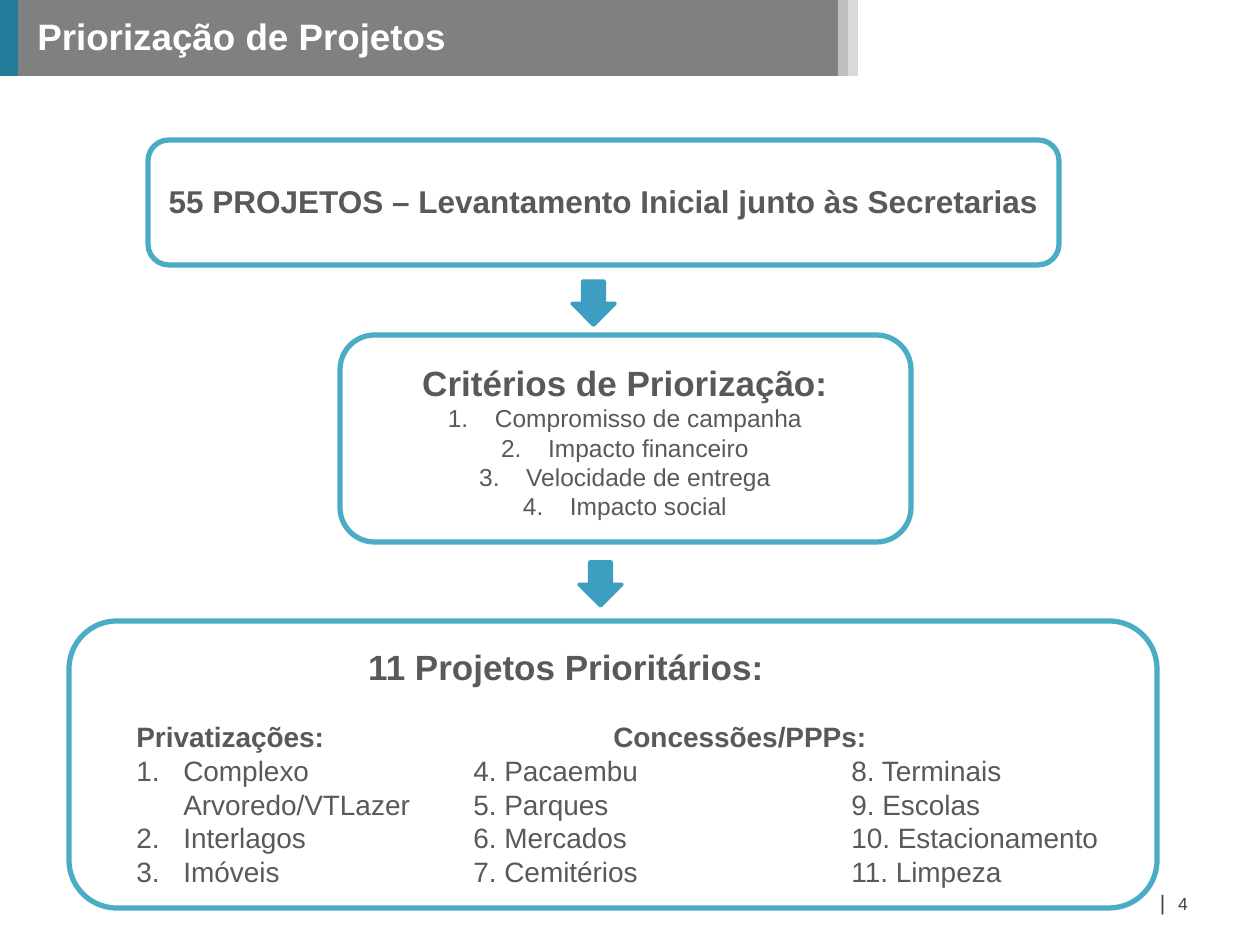
from dataclasses import dataclass

from lxml import etree
from pptx import Presentation
from pptx.dml.color import RGBColor
from pptx.enum.shapes import MSO_SHAPE
from pptx.enum.text import MSO_ANCHOR, PP_ALIGN
from pptx.oxml.ns import qn
from pptx.util import Emu, Pt

RECTANGLE = MSO_SHAPE.RECTANGLE
ROUNDED = MSO_SHAPE.ROUNDED_RECTANGLE
DOWN_ARROW = MSO_SHAPE.DOWN_ARROW
LEFT, CENTER, RIGHT = PP_ALIGN.LEFT, PP_ALIGN.CENTER, PP_ALIGN.RIGHT
TOP, MIDDLE = MSO_ANCHOR.TOP, MSO_ANCHOR.MIDDLE
EMU_PER_PX = 914400 / 126
NUMBER_INDENT = 47
COLUMN_TAB = 378
HEADING_INDENT = 140


@dataclass(frozen=True)
class Theme:
    font: str = "Arial"
    white: str = "FFFFFF"
    gray: str = "808080"
    light_gray: str = "D9D9D9"
    teal: str = "227D9A"
    border: str = "4BACC6"
    arrow: str = "3D9EC1"
    text: str = "595959"
    footer: str = "404040"
    title_size: int = 21
    heading_size: int = 20
    lead_size: int = 18
    list_size: int = 16
    criteria_size: int = 14
    separator_size: int = 12
    number_size: int = 10


THEME = Theme()


def px(length):
    return Emu(round(length * EMU_PER_PX))


def add_block(page, kind, bounds, fill, line=None, line_width=0, opacity=None):
    """Add a filled preset shape; opacity is a percentage."""
    block = page.shapes.add_shape(kind, *map(px, bounds))
    block.shadow.inherit = False
    block.fill.solid()
    block.fill.fore_color.rgb = RGBColor.from_string(fill)
    if opacity is not None:
        color = block.fill._xPr.find(".//" + qn("a:srgbClr"))
        etree.SubElement(color, qn("a:alpha"), val=str(opacity * 1000))
    if line:
        block.line.color.rgb = RGBColor.from_string(line)
        block.line.width = Pt(line_width)
    else:
        block.line.fill.background()


def add_box(page, bounds, anchor=TOP, inset=True, wrap=True):
    """Add a text box and return its text frame."""
    frame = page.shapes.add_textbox(*map(px, bounds)).text_frame
    frame.word_wrap = wrap
    frame.vertical_anchor = anchor
    if not inset:
        frame.margin_left = frame.margin_right = 0
        frame.margin_top = frame.margin_bottom = 0
    return frame


def add_para(frame, text, size, color=THEME.text, bold=False, align=LEFT,
             spacing=None, indent=0, numbered=False, tab=None):
    """Write into the empty first paragraph, or else append a new one."""
    first = frame.paragraphs[0]
    para = frame.add_paragraph() if first.runs else first
    properties = para._p.get_or_add_pPr()
    if indent:
        properties.set("marL", str(px(indent)))
    if numbered:
        properties.set("indent", str(-px(indent)))
        etree.SubElement(properties, qn("a:buFont"), typeface="+mj-lt")
        etree.SubElement(properties, qn("a:buAutoNum"), type="arabicPeriod")
    if tab:
        stops = etree.SubElement(properties, qn("a:tabLst"))
        etree.SubElement(stops, qn("a:tab"), pos=str(px(tab)), algn="l")
    para.alignment = align
    if spacing:
        para.line_spacing = spacing
    span = para.add_run()
    span.text = text
    span.font.name = THEME.font
    span.font.size = Pt(size)
    span.font.bold = bold
    span.font.color.rgb = RGBColor.from_string(color)


def add_numbered(frame, items, size, align=LEFT):
    for item in items:
        add_para(frame, item, size, align=align, indent=NUMBER_INDENT, numbered=True)


def add_panel(page, bounds):
    add_block(page, ROUNDED, bounds, THEME.white, THEME.border, 3)


def add_arrow(page, left, top):
    add_block(page, DOWN_ARROW, (left, top, 43, 44), THEME.arrow, THEME.arrow, 2)


def add_header(page):
    add_block(page, RECTANGLE, (0, 0, 858, 76), THEME.gray)
    add_block(page, RECTANGLE, (-5, 0, 23, 76), THEME.teal)
    add_block(page, RECTANGLE, (838, 0, 10, 76), THEME.white, opacity=50)
    add_block(page, RECTANGLE, (848, 0, 10, 76), THEME.light_gray)
    title = add_box(page, (25, 6, 804, 59), anchor=MIDDLE)
    add_para(title, "Priorização de Projetos", THEME.title_size, THEME.white, bold=True)


def add_footer(page):
    number = add_box(page, (1178, 893, 29, 21), MIDDLE, inset=False, wrap=False)
    add_para(number, "4", THEME.number_size, THEME.footer)
    separator = add_box(page, (1160, 890, 5, 25), MIDDLE, inset=False, wrap=False)
    add_para(separator, "|", THEME.separator_size, THEME.footer, align=RIGHT)


def add_survey(page):
    add_panel(page, (148, 140, 911, 125))
    survey = add_box(page, (111, 176, 985, 50))
    add_para(survey, "55 PROJETOS – Levantamento Inicial junto às Secretarias",
             THEME.lead_size, bold=True, align=CENTER)


def add_criteria(page):
    add_panel(page, (340, 335, 571, 207))
    criteria = add_box(page, (354, 334, 542, 195))
    add_para(criteria, "Critérios de Priorização:", THEME.heading_size,
             bold=True, align=CENTER, spacing=1.5)
    add_numbered(criteria, ("Compromisso de campanha", "Impacto financeiro",
                            "Velocidade de entrega", "Impacto social"),
                 THEME.criteria_size, CENTER)


def add_priorities(page):
    add_panel(page, (69, 621, 1088, 287))
    heading = add_box(page, (322, 639, 488, 55))
    add_para(heading, "11 Projetos Prioritários:", THEME.heading_size,
             bold=True, align=CENTER)

    sales = add_box(page, (124, 697, 377, 199))
    add_para(sales, "Privatizações:", THEME.list_size, bold=True, spacing=1.5)
    add_numbered(sales, ("Complexo Arvoredo/VTLazer", "Interlagos", "Imóveis"),
                 THEME.list_size)

    concessions = add_box(page, (461, 697, 696, 199))
    add_para(concessions, "Concessões/PPPs:", THEME.list_size, bold=True,
             spacing=1.5, indent=HEADING_INDENT)
    rows = (("4. Pacaembu", "8. Terminais"), ("5. Parques", "9. Escolas"),
            ("6. Mercados", "10. Estacionamento"), ("7. Cemitérios", "11. Limpeza"))
    for row in rows:
        add_para(concessions, "\t".join(row), THEME.list_size, tab=COLUMN_TAB)


def main():
    deck = Presentation()
    deck.slide_width, deck.slide_height = px(1260), px(945)
    page = deck.slides.add_slide(deck.slide_layouts[6])
    add_header(page)
    add_footer(page)
    add_survey(page)
    add_arrow(page, 572, 281)
    add_criteria(page)
    add_arrow(page, 579, 562)
    add_priorities(page)
    deck.save("out.pptx")


if __name__ == "__main__":
    main()
